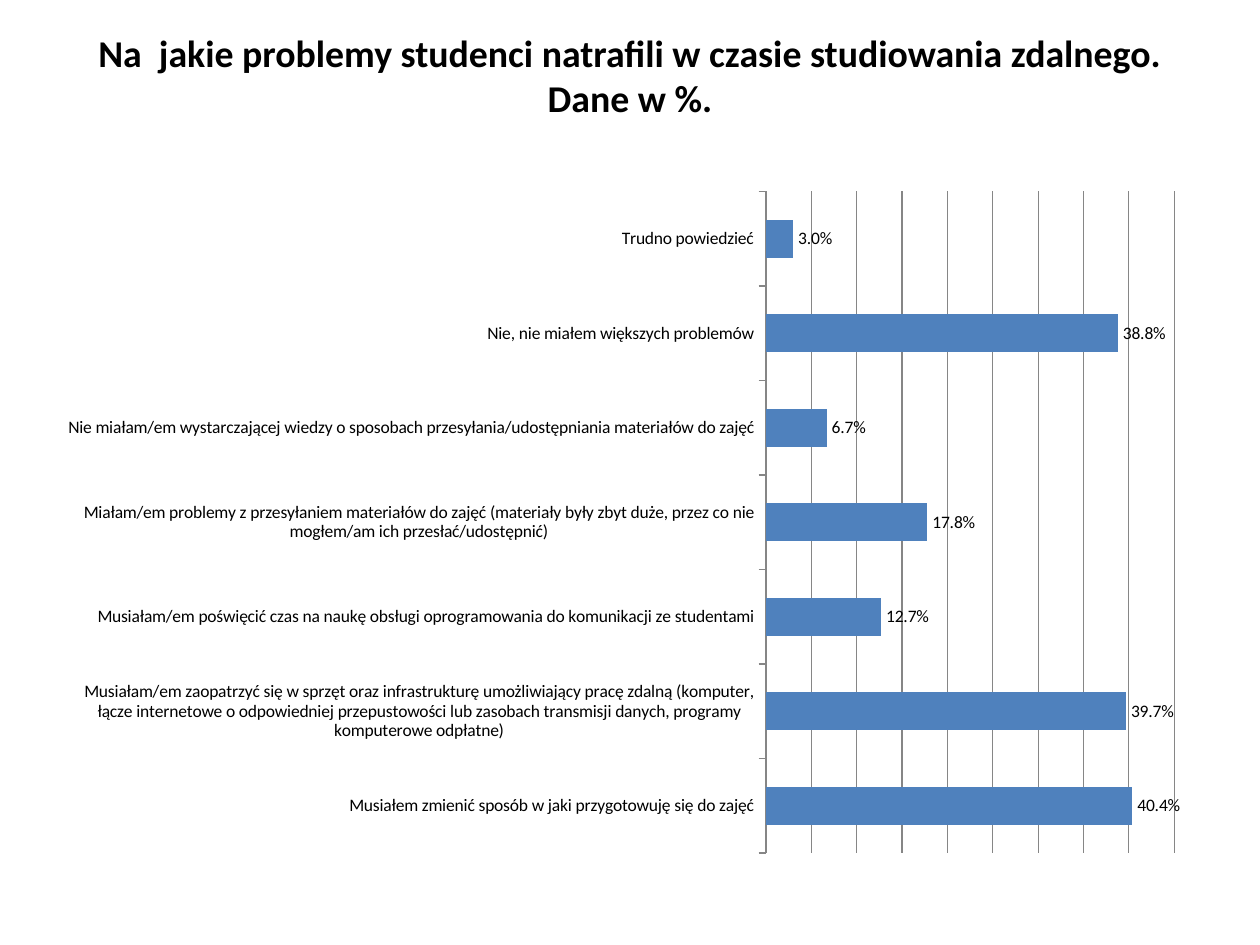
from dataclasses import dataclass

from lxml.etree import SubElement
from pptx import Presentation
from pptx.chart.data import CategoryChartData
from pptx.dml.color import RGBColor
from pptx.enum.chart import XL_CHART_TYPE, XL_LABEL_POSITION, XL_TICK_LABEL_POSITION, XL_TICK_MARK
from pptx.enum.text import MSO_ANCHOR, PP_ALIGN
from pptx.oxml.ns import qn
from pptx.util import Inches, Pt


@dataclass(frozen=True)
class Theme:
    """Colours, font and type sizes of the slide."""
    font: str = "Calibri"
    ink: RGBColor = RGBColor(0x00, 0x00, 0x00)
    bar: RGBColor = RGBColor(0x4F, 0x81, 0xBD)
    line: RGBColor = RGBColor(0x86, 0x86, 0x86)
    title: float = 21.6
    label: float = 10


THEME = Theme()
TITLE = "Na  jakie problemy studenci natrafili w czasie studiowania zdalnego. Dane w %."
PERCENT = "###0.0%"
PROBLEMS = [
    ("Musiałem zmienić sposób w jaki przygotowuję się do zajęć", 0.404),
    ("Musiałam/em zaopatrzyć się w sprzęt oraz infrastrukturę umożliwiający pracę zdalną "
     "(komputer, łącze internetowe o odpowiedniej przepustowości lub zasobach transmisji "
     "danych, programy komputerowe odpłatne)", 0.397),
    ("Musiałam/em poświęcić czas na naukę obsługi oprogramowania do komunikacji "
     "ze studentami", 0.127),
    ("Miałam/em problemy z przesyłaniem materiałów do zajęć (materiały były zbyt duże, "
     "przez co nie mogłem/am ich przesłać/udostępnić)", 0.178),
    ("Nie miałam/em wystarczającej wiedzy o sposobach przesyłania/udostępniania "
     "materiałów do zajęć", 0.067),
    ("Nie, nie miałem większych problemów", 0.388),
    ("Trudno powiedzieć", 0.03),
]


def format_font(font, size, bold=False):
    """Apply the theme font and ink at the given size."""
    font.name, font.size, font.bold = THEME.font, Pt(size), bold
    font.color.rgb = THEME.ink


def set_text(tf, text, size, bold=False, align=PP_ALIGN.LEFT, anchor=MSO_ANCHOR.TOP):
    """Write one formatted paragraph into a text frame."""
    tf.word_wrap, tf.vertical_anchor = True, anchor
    p = tf.paragraphs[0]
    p.alignment = align
    r = p.add_run()
    r.text = text
    format_font(r.font, size, bold)


def add_title(s, text):
    """Fill the title placeholder, keeping its lines in the upper part."""
    sp = s.shapes.title
    sp.left, sp.top, sp.width, sp.height = map(Inches, (0.5, 0.3, 9, 0.95))
    sp.text_frame.margin_bottom = Inches(0.41)
    set_text(sp.text_frame, text, THEME.title, bold=True,
             align=PP_ALIGN.CENTER, anchor=MSO_ANCHOR.MIDDLE)


def format_line(line):
    """Draw a thin grey chart line."""
    line.color.rgb, line.width = THEME.line, Pt(0.75)


def place_plot(chart, **box):
    """Fix the inner plot area as fractions of the chart."""
    area = chart._chartSpace.chart.plotArea
    for old in area.findall(qn("c:layout")):
        area.remove(old)
    layout = SubElement(area, qn("c:layout"))
    area.insert(0, layout)
    manual = SubElement(layout, qn("c:manualLayout"))
    settings = {"layoutTarget": "inner", "xMode": "edge", "yMode": "edge", **box}
    for name, value in settings.items():
        SubElement(manual, qn(f"c:{name}")).set("val", str(value))


def format_axes(chart):
    """Show the categories and a grid without value labels."""
    cat, val = chart.category_axis, chart.value_axis
    cat.major_tick_mark = XL_TICK_MARK.OUTSIDE
    cat.tick_label_position = XL_TICK_LABEL_POSITION.LOW
    format_line(cat.format.line)
    val.minimum_scale, val.maximum_scale, val.major_unit = 0, 0.45, 0.05
    val.has_major_gridlines, val.visible = True, False
    val.tick_labels.number_format = PERCENT
    val.tick_labels.number_format_is_linked = False
    format_line(val.major_gridlines.format.line)


def add_bar_chart(s, rows):
    """Add the bar chart of problems with percentage labels."""
    data = CategoryChartData(number_format=PERCENT)
    data.categories = [name for name, _ in rows]
    data.add_series("Series 1", [value for _, value in rows])
    box = map(Inches, (0.5, 1.41, 9, 5.47))
    chart = s.shapes.add_chart(XL_CHART_TYPE.BAR_CLUSTERED, *box, data).chart
    chart.has_legend = chart.has_title = False
    format_font(chart.font, THEME.label)
    format_axes(chart)
    plot = chart.plots[0]
    plot.gap_width, plot.vary_by_categories = 150, False
    fill = plot.series[0].format.fill
    fill.solid()
    fill.fore_color.rgb = THEME.bar
    plot.has_data_labels = True
    labels = plot.data_labels
    labels.show_value, labels.position = True, XL_LABEL_POSITION.OUTSIDE_END
    labels.number_format, labels.number_format_is_linked = PERCENT, False
    format_font(labels.font, THEME.label)
    place_plot(chart, x=0.62, y=0.02, w=0.36, h=0.96)


def main():
    """Build the slide and save it."""
    prs = Presentation()
    prs.slide_width, prs.slide_height = Inches(10), Inches(7.5)
    s = prs.slides.add_slide(prs.slide_layouts[5])
    add_title(s, TITLE)
    add_bar_chart(s, PROBLEMS)
    prs.save("out.pptx")


if __name__ == "__main__":
    main()
